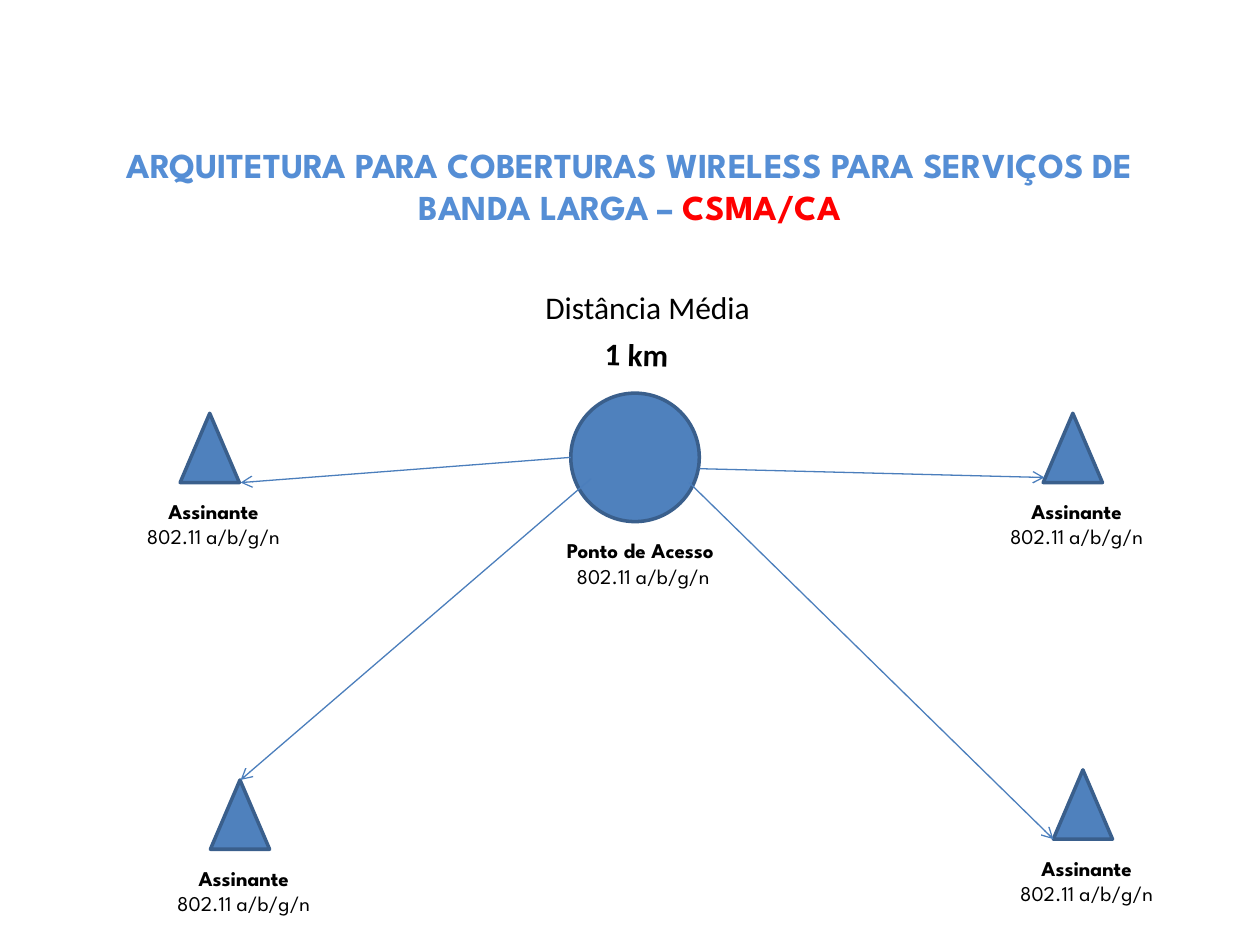
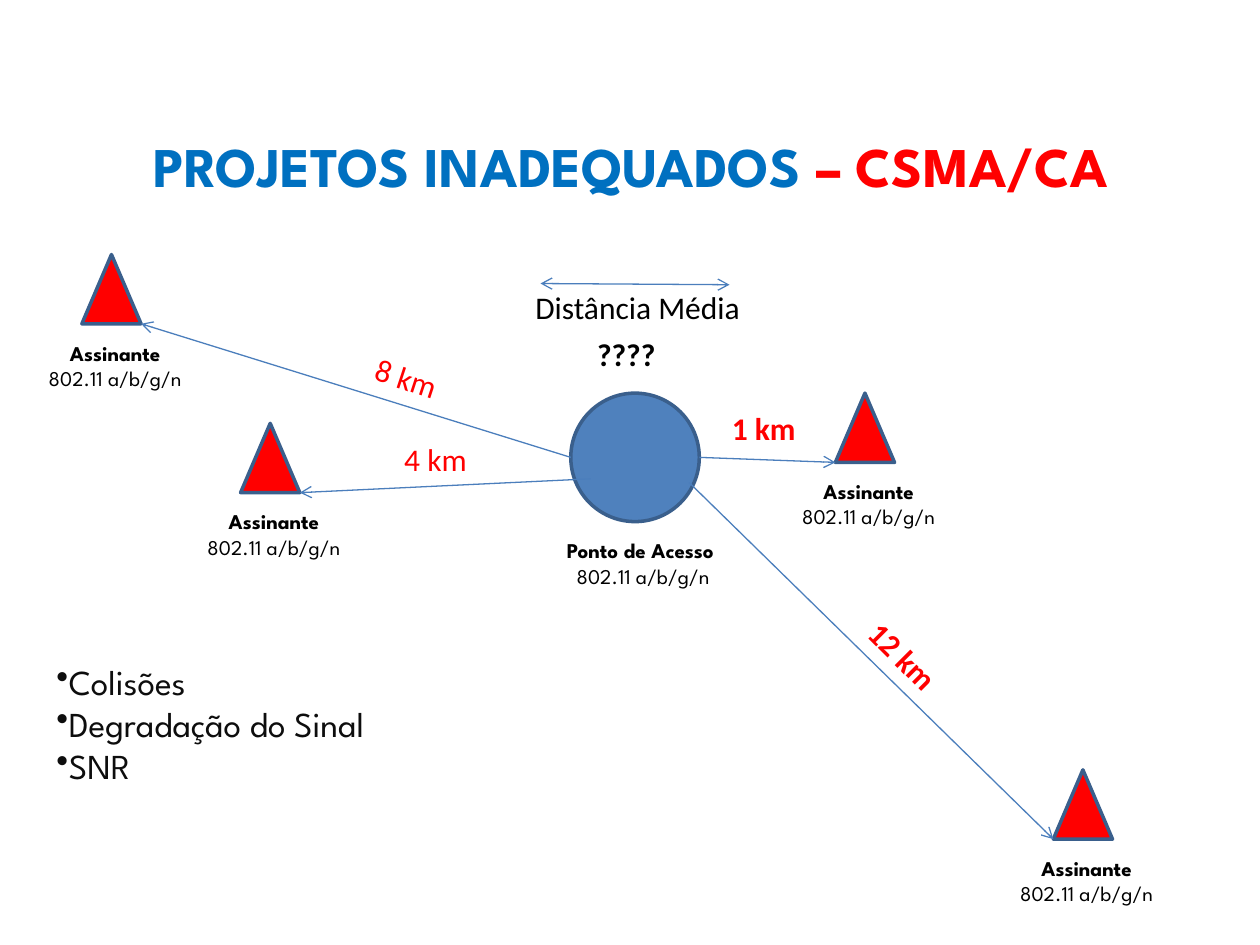
from pptx import Presentation
from pptx.dml.color import RGBColor
from pptx.enum.shapes import MSO_CONNECTOR, MSO_SHAPE
from pptx.enum.text import MSO_ANCHOR, PP_ALIGN
from pptx.oxml.ns import qn
from pptx.util import Inches, Pt
from lxml import etree

STRAIGHT = MSO_CONNECTOR.STRAIGHT
ELLIPSE, TRIANGLE = MSO_SHAPE.OVAL, MSO_SHAPE.ISOSCELES_TRIANGLE
MIDDLE, TOP = MSO_ANCHOR.MIDDLE, MSO_ANCHOR.TOP
LEFT, CENTER = PP_ALIGN.LEFT, PP_ALIGN.CENTER

COLORS = {
    "node": "4F81BD",
    "outline": "3A5F8C",
    "link": "4B7EBC",
    "alert": "FF0000",
    "title_light": "558ED5",
    "title_strong": "0070C0",
    "text": "000000",
    "bullet": "0D0D0D",
}
HEADING_FONT, DISTANCE_FONT = "League Spartan", "Calibri"
STANDARD = "802.11 a/b/g/n"


def rgb(name):
    """Return the named palette colour."""
    return RGBColor.from_string(COLORS[name])


def set_font(font, name, size, color, bold=False):
    """Apply typeface, size, colour and weight to a font."""
    font.name, font.size, font.bold = name, Pt(size), bold
    font.color.rgb = rgb(color)


def add_box(slide, left, top, width, height, wrap=True, anchor=TOP):
    """Add an empty text box and return it."""
    sp = slide.shapes.add_textbox(Inches(left), Inches(top), Inches(width), Inches(height))
    sp.text_frame.word_wrap = wrap
    sp.text_frame.vertical_anchor = anchor
    return sp


def add_paragraph(tf, text, index, align=LEFT):
    """Write one paragraph, reusing the empty first one."""
    p = tf.add_paragraph() if index else tf.paragraphs[0]
    p.alignment = align
    p.add_run().text = text
    return p


def add_title(slide, left, top, size, color, text, highlight):
    """Add the centred title with its ending in red."""
    tf = add_box(slide, left, top, 9, 1.1, anchor=MIDDLE).text_frame
    p = add_paragraph(tf, text, 0, CENTER)
    set_font(p.font, HEADING_FONT, size, color, True)
    r = p.add_run()
    r.text = highlight
    r.font.color.rgb = rgb("alert")


def add_node(slide, kind, left, top, width, height, fill):
    """Add an outlined network node."""
    sp = slide.shapes.add_shape(kind, Inches(left), Inches(top), Inches(width), Inches(height))
    sp.shadow.inherit = False
    sp.fill.solid()
    sp.fill.fore_color.rgb = rgb(fill)
    sp.line.color.rgb = rgb("outline")
    sp.line.width = Pt(2)


def add_caption(slide, left, top, width, name):
    """Add a node's bold name above its radio standard."""
    tf = add_box(slide, left, top, width, 0.5, wrap=False).text_frame
    for i, text in enumerate((name, STANDARD)):
        p = add_paragraph(tf, text, i, CENTER)
        set_font(p.font, HEADING_FONT, 12, "text", i == 0)


def add_access_point(slide):
    """Add the central access point."""
    add_node(slide, ELLIPSE, 4.53, 3.12, 1.02, 1.02, "node")
    add_caption(slide, 4.29, 4.22, 1.63, "Ponto de Acesso ")


def add_subscriber(slide, left, top, fill):
    """Add a subscriber triangle with its caption."""
    add_node(slide, TRIANGLE, left, top, 0.47, 0.55, fill)
    add_caption(slide, left - 0.45, top + 0.63, 1.43, "Assinante")


def add_arrow(slide, start, end, ends=("tailEnd",)):
    """Add a thin line with open arrowheads."""
    c = slide.shapes.add_connector(STRAIGHT, *map(Inches, start + end))
    c.line.color.rgb = rgb("link")
    c.line.width = Pt(0.75)
    sp_pr = c.element.spPr
    for tag in ends:
        etree.SubElement(sp_pr.find(qn("a:ln")), qn(f"a:{tag}"), type="arrow")
    etree.SubElement(sp_pr, qn("a:effectLst"))


def add_distance(slide, left, top, width, text, color="text", bold=True, rotation=0):
    """Add a one-line distance label."""
    sp = add_box(slide, left, top, width, 0.4, wrap=False)
    sp.rotation = rotation
    p = add_paragraph(sp.text_frame, text, 0)
    set_font(p.font, DISTANCE_FONT, 18, color, bold)


def add_bullets(slide, left, top, width, height, items):
    """Add a bulleted list."""
    tf = add_box(slide, left, top, width, height, anchor=MIDDLE).text_frame
    for i, text in enumerate(items):
        p = add_paragraph(tf, text, i)
        etree.SubElement(p._p.get_or_add_pPr(), qn("a:buChar"), char="•")
        set_font(p.font, HEADING_FONT, 20, "bullet")


def add_network(slide, subscribers, fill, links):
    """Add the access point, its subscribers and the links."""
    add_access_point(slide)
    for left, top in subscribers:
        add_subscriber(slide, left, top, fill)
    for start, end in links:
        add_arrow(slide, start, end)


def build_coverage(slide):
    """Build the recommended coverage slide."""
    add_title(slide, 0.5, 0.92, 20, "title_light",
              "ARQUITETURA PARA COBERTURAS WIRELESS PARA SERVIÇOS DE BANDA LARGA – ",
              "CSMA/CA")
    add_network(
        slide,
        [(8.28, 3.28), (8.36, 6.11), (1.67, 6.19), (1.43, 3.28)],
        "node",
        [((5.55, 3.72), (8.29, 3.79)), ((4.53, 3.63), (1.91, 3.83)),
         ((4.69, 3.8), (1.91, 6.19)), ((5.47, 3.83), (8.36, 6.66))],
    )
    add_distance(slide, 4.7, 2.61, 0.71, "1 km", rotation=1.6)
    add_distance(slide, 4.23, 2.24, 1.84, "Distância Média", bold=False)


def build_inadequate(slide):
    """Build the inadequate projects slide."""
    add_title(slide, 0.51, 0.76, 32, "title_strong", "PROJETOS INADEQUADOS ", "– CSMA/CA")
    add_network(
        slide,
        [(6.63, 3.12), (8.36, 6.11), (1.91, 3.36), (0.65, 2.02)],
        "alert",
        [((5.55, 3.63), (6.63, 3.67)), ((4.53, 3.63), (1.12, 2.57)),
         ((4.69, 3.8), (2.38, 3.91)), ((5.47, 3.83), (8.36, 6.66))],
    )
    add_distance(slide, 4.64, 2.61, 0.67, "????")
    add_distance(slide, 4.15, 2.24, 1.84, "Distância Média", bold=False)
    add_arrow(slide, (4.29, 2.25), (5.79, 2.26), ("headEnd", "tailEnd"))
    add_bullets(slide, 0.35, 5.19, 5.67, 1.1, ["Colisões", "Degradação do Sinal", "SNR"])
    for left, top, width, text, bold, rotation in (
        (5.71, 3.2, 0.71, "1 km", True, 0),
        (6.75, 5.01, 0.84, "12 km", True, 45.1),
        (2.88, 2.8, 0.7, "8 km", False, 18.2),
        (3.11, 3.44, 0.7, "4 km", False, 0),
    ):
        add_distance(slide, left, top, width, text, "alert", bold, rotation)


def main():
    """Build and save the presentation."""
    prs = Presentation()
    prs.slide_width, prs.slide_height = Inches(10), Inches(7.5)
    for build in (build_coverage, build_inadequate):
        build(prs.slides.add_slide(prs.slide_layouts[6]))
    prs.save("out.pptx")


if __name__ == "__main__":
    main()
